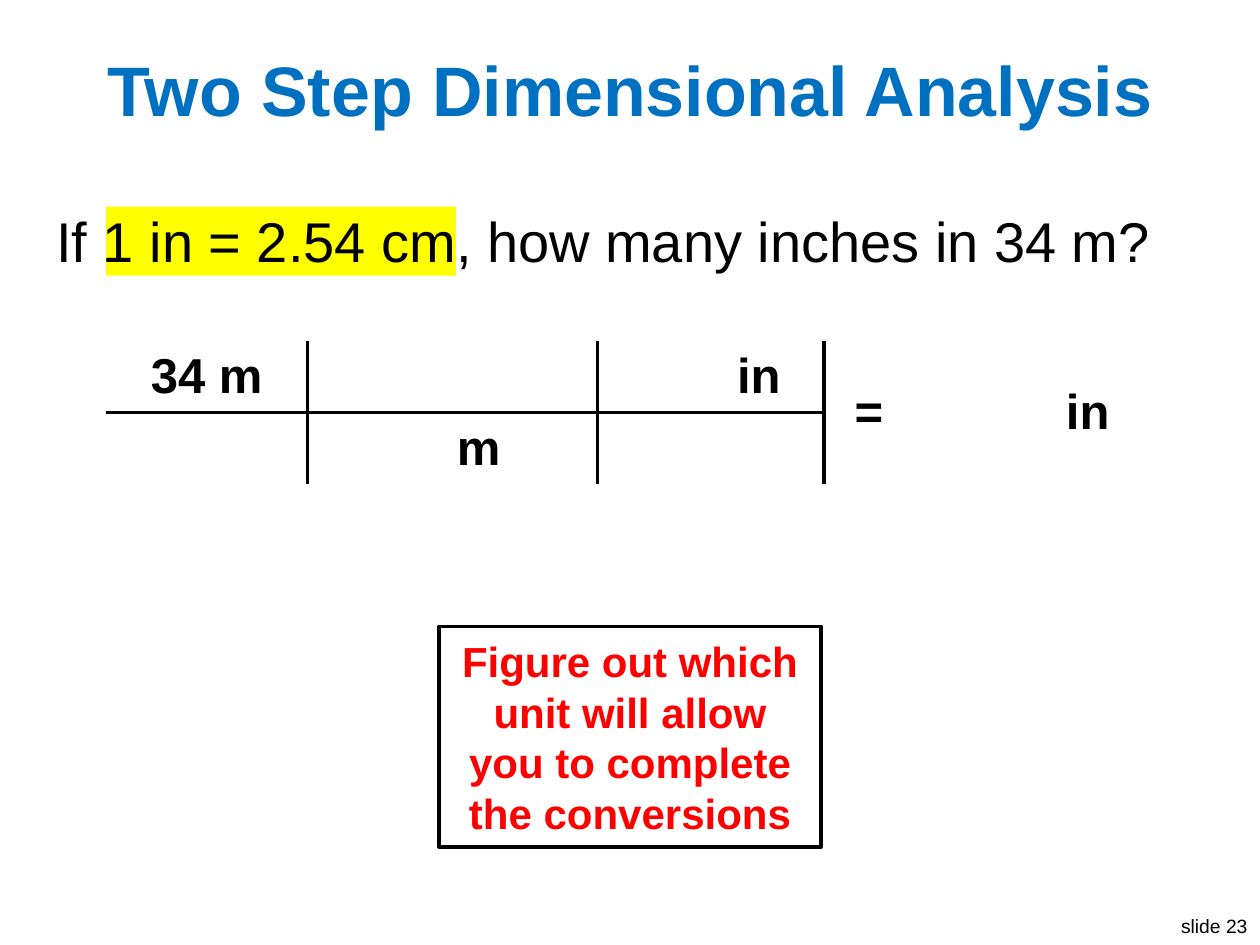
from dataclasses import dataclass

from lxml import etree
from pptx import Presentation
from pptx.dml.color import RGBColor
from pptx.enum.shapes import MSO_SHAPE
from pptx.enum.text import MSO_ANCHOR, PP_ALIGN
from pptx.oxml.ns import qn
from pptx.util import Pt

RECTANGLE = MSO_SHAPE.RECTANGLE
MIDDLE = MSO_ANCHOR.MIDDLE
LEFT, CENTER, RIGHT = PP_ALIGN.LEFT, PP_ALIGN.CENTER, PP_ALIGN.RIGHT
TITLE_ONLY = 5


@dataclass(frozen=True)
class Theme:
    font: str = "Arial"
    ink: str = "000000"
    paper: str = "FFFFFF"
    title: str = "0070C0"
    hint: str = "FF0000"
    highlight: str = "FFFF00"
    title_size: float = 40
    question_size: float = 32
    table_size: float = 28
    hint_size: float = 24
    footer_size: float = 11
    line: float = 2.25


@dataclass(frozen=True)
class Box:
    left: float
    top: float
    width: float
    height: float

    def lengths(self) -> tuple:
        return Pt(self.left), Pt(self.top), Pt(self.width), Pt(self.height)


@dataclass(frozen=True)
class Entry:
    row: int
    column: int
    text: str
    indent: float = 0


THEME = Theme()
TABLE_BOX = Box(60.5, 195, 598.5, 81.5)
COLUMN_WIDTHS = (115.2, 165.6, 129.6, 51.3, 136.8)
ROW_COUNT = 2
GRID_COLUMNS = 3
CELL_MARGIN = 7.2
ENTRIES = (
    Entry(0, 0, "34 m"),
    Entry(0, 2, "in", 55),
    Entry(0, 3, "="),
    Entry(0, 4, "in", 62),
    Entry(1, 1, "m", 30),
)


def write(frame, text: str, size: float, color: str, align, bold: bool = False) -> None:
    para = frame.paragraphs[0]
    para.alignment = align
    span = para.add_run()
    span.text = text
    span.font.name = THEME.font
    span.font.size = Pt(size)
    span.font.bold = bold
    span.font.color.rgb = RGBColor.from_string(color)


def add_title(page, box: Box, text: str) -> None:
    title = page.shapes.title
    title.left, title.top, title.width, title.height = box.lengths()
    title.text_frame.vertical_anchor = MIDDLE
    write(title.text_frame, text, THEME.title_size, THEME.title, CENTER, True)


def add_text(page, box: Box, text: str, size: float, align, wrap: bool) -> None:
    frame = page.shapes.add_textbox(*box.lengths()).text_frame
    frame.word_wrap = wrap
    write(frame, text, size, THEME.ink, align)


def add_rectangle(page, box: Box):
    shape = page.shapes.add_shape(RECTANGLE, *box.lengths())
    shape.shadow.inherit = False
    return shape


def add_highlight(page, box: Box) -> None:
    shape = add_rectangle(page, box)
    shape.fill.solid()
    shape.fill.fore_color.rgb = RGBColor.from_string(THEME.highlight)
    shape.line.fill.background()


def add_hint(page, box: Box, text: str) -> None:
    shape = add_rectangle(page, box)
    shape.fill.background()
    shape.line.color.rgb = RGBColor.from_string(THEME.ink)
    shape.line.width = Pt(THEME.line)
    shape.text_frame.word_wrap = True
    shape.text_frame.vertical_anchor = MIDDLE
    write(shape.text_frame, text, THEME.hint_size, THEME.hint, CENTER, True)


def add_borders(cell, row: int, column: int) -> None:
    in_grid = column < GRID_COLUMNS
    sides = {
        "a:lnL": 0 < column <= GRID_COLUMNS,
        "a:lnR": in_grid,
        "a:lnT": in_grid and row > 0,
        "a:lnB": in_grid and row < ROW_COUNT - 1,
    }
    properties = cell._tc.get_or_add_tcPr()
    for tag, drawn in sides.items():
        border = etree.SubElement(properties, qn(tag), w=str(Pt(THEME.line)))
        if drawn:
            fill = etree.SubElement(border, qn("a:solidFill"))
            etree.SubElement(fill, qn("a:srgbClr"), val=THEME.ink)
        else:
            etree.SubElement(border, qn("a:noFill"))


def add_conversion_table(page, box: Box) -> None:
    table = page.shapes.add_table(ROW_COUNT, len(COLUMN_WIDTHS), *box.lengths()).table
    table.first_row = False
    table.horz_banding = False
    for column, width in zip(table.columns, COLUMN_WIDTHS):
        column.width = Pt(width)
    for row in range(ROW_COUNT):
        for column in range(len(COLUMN_WIDTHS)):
            cell = table.cell(row, column)
            add_borders(cell, row, column)
            cell.fill.solid()
            cell.fill.fore_color.rgb = RGBColor.from_string(THEME.paper)
    for column in range(GRID_COLUMNS, len(COLUMN_WIDTHS)):
        table.cell(0, column).merge(table.cell(ROW_COUNT - 1, column))
    for entry in ENTRIES:
        cell = table.cell(entry.row, entry.column)
        cell.vertical_anchor = MIDDLE
        cell.margin_left = Pt(CELL_MARGIN + entry.indent)
        write(cell.text_frame, entry.text, THEME.table_size, THEME.ink, CENTER, True)


def main() -> None:
    deck = Presentation()
    deck.slide_width, deck.slide_height = Pt(720), Pt(540)
    page = deck.slides.add_slide(deck.slide_layouts[TITLE_ONLY])
    add_text(page, Box(666, 519, 54, 21), "slide 23", THEME.footer_size, RIGHT, False)
    add_highlight(page, Box(60.5, 118, 200, 39.5))
    add_conversion_table(page, TABLE_BOX)
    add_title(page, Box(14.4, 21.6, 691.2, 57.6), "Two Step Dimensional Analysis")
    add_text(page, Box(25.2, 114.5, 669.6, 46),
             "If 1 in = 2.54 cm, how many inches in 34 m?", THEME.question_size, LEFT, True)
    add_hint(page, Box(251, 358, 218, 126),
             "Figure out which unit will allow you to complete the conversions")
    deck.save("out.pptx")


if __name__ == "__main__":
    main()
